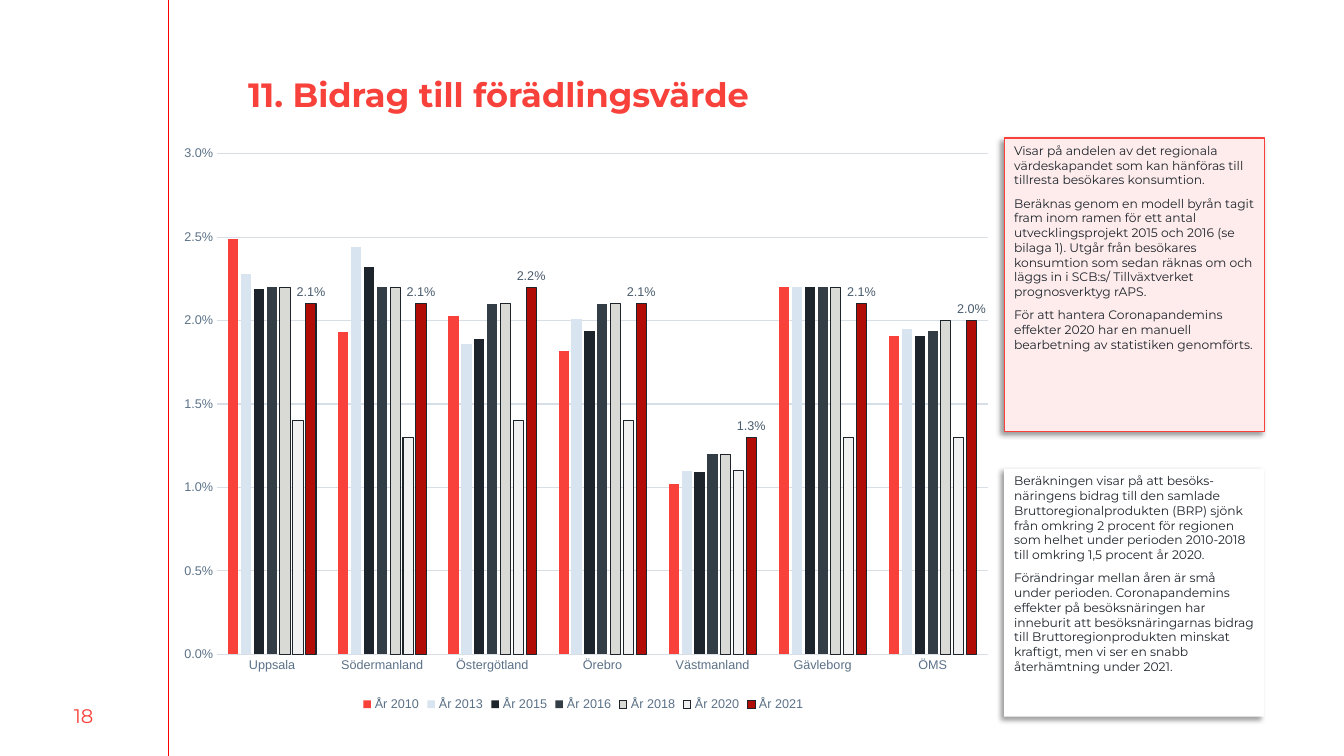
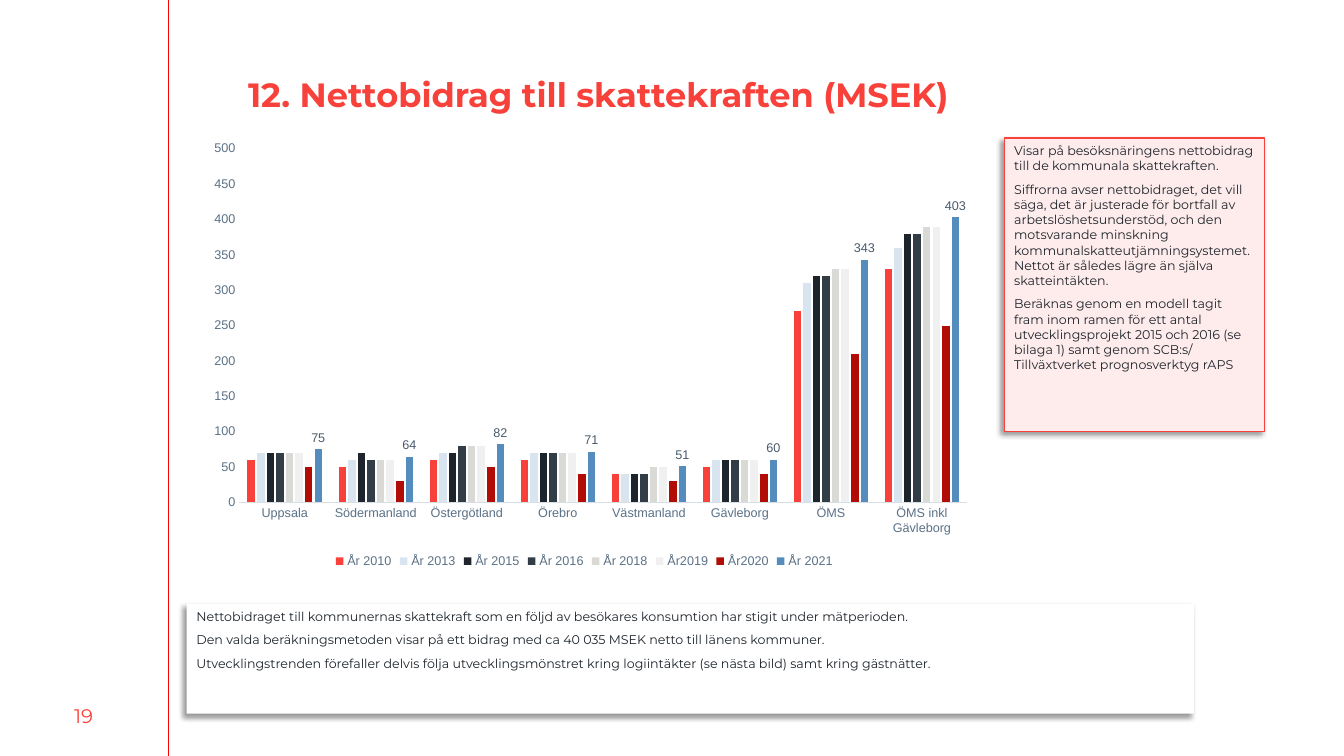
"""Build two slides on the visitor industry's contribution: value added and tax base."""
import lxml.etree
import pptx
import pptx.chart.data
import pptx.dml.color
import pptx.enum.chart
import pptx.enum.shapes
import pptx.enum.text
import pptx.oxml.ns
import pptx.util

Inches = pptx.util.Inches
Pt = pptx.util.Pt
RGBColor = pptx.dml.color.RGBColor
qn = pptx.oxml.ns.qn

CORAL = RGBColor(0xF7, 0x41, 0x3A)
RULE_RED = RGBColor(0xFF, 0x00, 0x00)
PINK = RGBColor(0xFE, 0xEC, 0xEC)
WHITE = RGBColor(0xFF, 0xFF, 0xFF)
INK = RGBColor(0x1D, 0x24, 0x2B)
AXIS_TEXT = RGBColor(0x5B, 0x71, 0x87)
AXIS_LINE = RGBColor(0xD8, 0xDE, 0xE5)
LABEL_TEXT = RGBColor(0x49, 0x5B, 0x6C)
BAR_RED = RGBColor(0xF8, 0x41, 0x3A)
BAR_PALE_BLUE = RGBColor(0xD8, 0xE5, 0xF0)
BAR_SLATE = RGBColor(0x33, 0x3D, 0x46)
BAR_GREY = RGBColor(0xD9, 0xD9, 0xD6)
BAR_LIGHT = RGBColor(0xF0, 0xF0, 0xF0)
BAR_DARK_RED = RGBColor(0xB1, 0x0D, 0x06)
BAR_BLUE = RGBColor(0x54, 0x8D, 0xBD)

TITLE_FONT = {"name": "Montserrat", "size": Pt(24), "bold": True}
NUMBER_FONT = {"name": "Montserrat", "size": Pt(14)}
CHART_FONT = {"name": "Arial", "size": Pt(9)}
NOTE_SPACING = {"space_before": Pt(3), "space_after": Pt(3)}
SHADOW = {"blurRad": Pt(4), "dist": Pt(3), "dir": 135 * 60000, "algn": "tr", "rotWithShape": 0}
INFO_BOX = (9.96, 1.37, 2.58, 2.91)
COUNTIES = ["Uppsala", "Södermanland", "Östergötland", "Örebro", "Västmanland", "Gävleborg", "ÖMS"]

SLIDES = [
    {
        "number": "18",
        "title": "11. Bidrag till förädlingsvärde",
        "note_size": 8.8,
        "info": [
            "Visar på andelen av det regionala värdeskapandet som kan hänföras till tillresta besökares konsumtion.",
            "Beräknas genom en modell byrån tagit fram inom ramen för ett antal utvecklingsprojekt 2015 och 2016 "
            "(se bilaga 1). Utgår från besökares konsumtion som sedan räknas om och läggs in i SCB:s/ "
            "Tillväxtverket prognosverktyg rAPS.",
            "För att hantera Coronapandemins effekter 2020 har en manuell bearbetning av statistiken genomförts.",
        ],
        "findings_box": (9.96, 4.65, 2.58, 2.46),
        "findings": [
            "Beräkningen visar på att besöks-näringens bidrag till den samlade Bruttoregionalprodukten (BRP) sjönk "
            "från omkring 2 procent för regionen som helhet under perioden 2010-2018 till omkring 1,5 procent år 2020.",
            "Förändringar mellan åren är små under perioden. Coronapandemins effekter på besöksnäringen har "
            "inneburit att besöksnäringarnas bidrag till Bruttoregionprodukten minskat kraftigt, men vi ser en "
            "snabb återhämtning under 2021.",
        ],
        "chart_box": (1.74, 1.37, 8.09, 5.73),
        "plot_area": {"x": 0.051, "y": 0.027, "w": 0.945, "h": 0.867},
        "scale": {"minimum_scale": 0, "maximum_scale": 0.03, "major_unit": 0.005, "has_major_gridlines": True},
        "format": "0.0%",
        "categories": COUNTIES,
        "series": [
            ("År 2010", BAR_RED, False, [0.0249, 0.0193, 0.0203, 0.0182, 0.0102, 0.022, 0.0191]),
            ("År 2013", BAR_PALE_BLUE, False, [0.0228, 0.0244, 0.0186, 0.0201, 0.011, 0.022, 0.0195]),
            ("År 2015", INK, False, [0.0219, 0.0232, 0.0189, 0.0194, 0.0109, 0.022, 0.0191]),
            ("År 2016", BAR_SLATE, False, [0.022, 0.022, 0.021, 0.021, 0.012, 0.022, 0.0194]),
            ("År 2018", BAR_GREY, True, [0.022, 0.022, 0.021, 0.021, 0.012, 0.022, 0.02]),
            ("År 2020", BAR_LIGHT, True, [0.014, 0.013, 0.014, 0.014, 0.011, 0.013, 0.013]),
            ("År 2021", BAR_DARK_RED, True, [0.021, 0.021, 0.022, 0.021, 0.013, 0.021, 0.02]),
        ],
    },
    {
        "number": "19",
        "title": "12. Nettobidrag till skattekraften (MSEK)",
        "note_size": 9,
        "info": [
            "Visar på besöksnäringens nettobidrag till de kommunala skattekraften.",
            "Siffrorna avser nettobidraget, det vill säga, det är justerade för bortfall av arbetslöshetsunderstöd, "
            "och den motsvarande minskning kommunalskatteutjämningsystemet. Nettot är således lägre än själva "
            "skatteintäkten.",
            "Beräknas genom en modell tagit fram inom ramen för ett antal utvecklingsprojekt 2015 och 2016 "
            "(se bilaga 1) samt genom SCB:s/ Tillväxtverket prognosverktyg rAPS",
        ],
        "findings_box": (1.85, 5.99, 9.99, 1.09),
        "findings": [
            "Nettobidraget till kommunernas skattekraft som en följd av besökares konsumtion har stigit under "
            "mätperioden.",
            "Den valda beräkningsmetoden visar på ett bidrag med ca 40 035 MSEK netto till länens kommuner.",
            "Utvecklingstrenden förefaller delvis följa utvecklingsmönstret kring logiintäkter (se nästa bild) "
            "samt kring gästnätter.",
        ],
        "chart_box": (1.76, 1.36, 8.07, 4.32),
        "plot_area": {"x": 0.076, "y": 0.027, "w": 0.895, "h": 0.812},
        "scale": {"minimum_scale": 0, "maximum_scale": 500, "major_unit": 50, "has_major_gridlines": False},
        "format": "0",
        "categories": COUNTIES + ["ÖMS inkl Gävleborg"],
        "series": [
            ("År 2010", BAR_RED, False, [60, 50, 60, 60, 40, 50, 270, 330]),
            ("År 2013", BAR_PALE_BLUE, False, [70, 60, 70, 70, 40, 60, 310, 360]),
            ("År 2015", INK, False, [70, 70, 70, 70, 40, 60, 320, 380]),
            ("År 2016", BAR_SLATE, False, [70, 60, 80, 70, 40, 60, 320, 380]),
            ("År 2018", BAR_GREY, False, [70, 60, 80, 70, 50, 60, 330, 390]),
            ("År2019", BAR_LIGHT, False, [70, 60, 80, 70, 50, 60, 330, 390]),
            ("År2020", BAR_DARK_RED, False, [50, 30, 50, 40, 30, 40, 210, 250]),
            ("År 2021", BAR_BLUE, False, [75, 64, 82, 71, 51, 60, 343, 403]),
        ],
    },
]


def set_values(target, values, color=None):
    """Set each attribute in values, and the font colour if one is given."""
    for attribute, value in values.items():
        setattr(target, attribute, value)
    if color is not None:
        target.color.rgb = color


def add_xml(parent, tag, **attributes):
    """Append a child element with the given attributes."""
    return lxml.etree.SubElement(parent, qn(tag), {key: str(value) for key, value in attributes.items()})


deck = pptx.Presentation()
deck.slide_width = Inches(13.33)
deck.slide_height = Inches(7.5)

for content in SLIDES:
    slide = deck.slides.add_slide(deck.slide_layouts[6])
    shapes = slide.shapes

    margin_rule = shapes.add_connector(
        pptx.enum.shapes.MSO_CONNECTOR.STRAIGHT, Inches(1.67), Inches(0), Inches(1.67), Inches(7.5))
    margin_rule.line.color.rgb = RULE_RED
    margin_rule.line.width = Pt(0.75)
    add_xml(margin_rule.element.spPr, "a:effectLst")

    page_number = shapes.add_textbox(Inches(0), Inches(6.9), Inches(1.66), Inches(0.4)).text_frame
    set_values(page_number, {"word_wrap": True, "vertical_anchor": pptx.enum.text.MSO_ANCHOR.MIDDLE,
                             "text": content["number"]})
    page_number.paragraphs[0].alignment = pptx.enum.text.PP_ALIGN.CENTER
    set_values(page_number.paragraphs[0].font, NUMBER_FONT, CORAL)

    title = shapes.add_textbox(Inches(2.41), Inches(0.68), Inches(10.12), Inches(0.89)).text_frame
    set_values(title, {"word_wrap": True, "margin_left": Inches(0.05), "margin_right": Inches(0.05),
                       "margin_top": Inches(0.05), "margin_bottom": Inches(0.05), "text": content["title"]})
    set_values(title.paragraphs[0].font, TITLE_FONT, CORAL)

    for box, fill, border, texts in (
        (INFO_BOX, PINK, CORAL, content["info"]),
        (content["findings_box"], WHITE, None, content["findings"]),
    ):
        note = shapes.add_shape(pptx.enum.shapes.MSO_SHAPE.RECTANGLE, *map(Inches, box))
        note.fill.solid()
        note.fill.fore_color.rgb = fill
        if border is None:
            note.line.fill.background()
        else:
            note.line.color.rgb = border
            note.line.width = Pt(1)
        note.shadow.inherit = False
        shadow = add_xml(note.element.spPr.find(qn("a:effectLst")), "a:outerShdw", **SHADOW)
        add_xml(add_xml(shadow, "a:srgbClr", val="000000"), "a:alpha", val=40000)

        frame = note.text_frame
        set_values(frame, {"word_wrap": True, "vertical_anchor": pptx.enum.text.MSO_ANCHOR.TOP})
        for position, text in enumerate(texts):
            paragraph = frame.add_paragraph() if position else frame.paragraphs[0]
            set_values(paragraph, NOTE_SPACING)
            if position == 0:
                paragraph.space_before = Pt(0)
            paragraph.text = text
            paragraph.alignment = pptx.enum.text.PP_ALIGN.LEFT
            set_values(paragraph.font, {"name": "Montserrat", "size": Pt(content["note_size"])}, INK)

    chart_data = pptx.chart.data.CategoryChartData(number_format=content["format"])
    chart_data.categories = content["categories"]
    for name, color, outlined, values in content["series"]:
        chart_data.add_series(name, values)
    chart = shapes.add_chart(pptx.enum.chart.XL_CHART_TYPE.COLUMN_CLUSTERED,
                             *map(Inches, content["chart_box"]), chart_data).chart
    set_values(chart, {"has_title": False, "has_legend": True})
    set_values(chart.font, {"name": "Arial", "size": Pt(10)}, INK)
    set_values(chart.legend, {"position": pptx.enum.chart.XL_LEGEND_POSITION.BOTTOM, "include_in_layout": False})
    set_values(chart.legend.font, CHART_FONT, AXIS_TEXT)

    for axis in (chart.category_axis, chart.value_axis):
        set_values(axis, {"major_tick_mark": pptx.enum.chart.XL_TICK_MARK.NONE,
                          "minor_tick_mark": pptx.enum.chart.XL_TICK_MARK.NONE})
        set_values(axis.tick_labels.font, CHART_FONT, AXIS_TEXT)
    chart.category_axis.format.line.color.rgb = AXIS_LINE
    chart.category_axis.format.line.width = Pt(0.75)
    value_axis = chart.value_axis
    set_values(value_axis, content["scale"])
    set_values(value_axis.tick_labels, {"number_format": content["format"], "number_format_is_linked": False})
    value_axis.format.line.fill.background()
    if value_axis.has_major_gridlines:
        value_axis.major_gridlines.format.line.color.rgb = AXIS_LINE
        value_axis.major_gridlines.format.line.width = Pt(0.75)

    plot = chart.plots[0]
    set_values(plot, {"gap_width": 219, "overlap": -27, "vary_by_categories": False})
    for series, (name, color, outlined, values) in zip(plot.series, content["series"]):
        series.format.fill.solid()
        series.format.fill.fore_color.rgb = color
        if outlined:
            series.format.line.color.rgb = INK
            series.format.line.width = Pt(0.75)
    latest_labels = plot.series[len(content["series"]) - 1].data_labels
    set_values(latest_labels, {"show_value": True, "number_format": content["format"],
                               "number_format_is_linked": False,
                               "position": pptx.enum.chart.XL_LABEL_POSITION.OUTSIDE_END})
    set_values(latest_labels.font, CHART_FONT, LABEL_TEXT)

    plot_area = chart.element.find(".//" + qn("c:plotArea"))
    for automatic_layout in plot_area.findall(qn("c:layout")):
        plot_area.remove(automatic_layout)
    layout = add_xml(plot_area, "c:layout")
    plot_area.insert(0, layout)
    manual = add_xml(layout, "c:manualLayout")
    add_xml(manual, "c:layoutTarget", val="inner")
    for side in ("x", "y"):
        add_xml(manual, f"c:{side}Mode", val="edge")
    for side, share in content["plot_area"].items():
        add_xml(manual, f"c:{side}", val=share)

deck.save("out.pptx")
